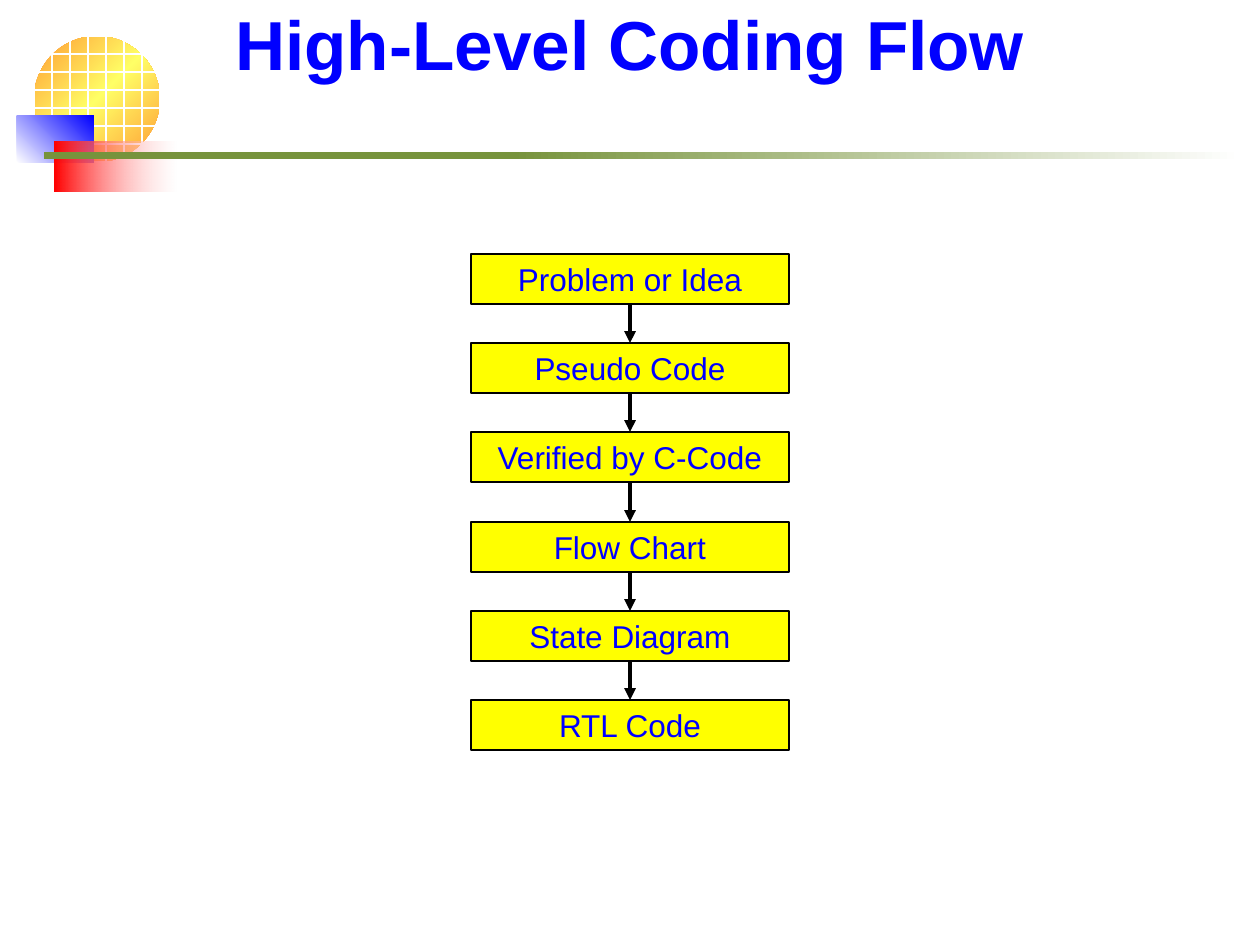
from dataclasses import dataclass
from itertools import product

from lxml.etree import SubElement
from pptx import Presentation
from pptx.dml.color import RGBColor
from pptx.enum.shapes import MSO_CONNECTOR, MSO_SHAPE
from pptx.enum.text import MSO_ANCHOR, PP_ALIGN
from pptx.oxml.ns import qn
from pptx.util import Emu, Pt

PX_PER_INCH = 126
FONT = "Arial"

BLUE = RGBColor(0x00, 0x00, 0xFF)
YELLOW = RGBColor(0xFF, 0xFF, 0x00)
BLACK = RGBColor(0x00, 0x00, 0x00)
WHITE = RGBColor(0xFF, 0xFF, 0xFF)
RED = RGBColor(0xFF, 0x00, 0x00)
ORANGE = RGBColor(0xFF, 0x99, 0x33)
PALE_YELLOW = RGBColor(0xFF, 0xFF, 0x66)
OLIVE = RGBColor(0x77, 0x93, 0x3C)


@dataclass
class Box:
    left: int
    top: int
    width: int
    height: int

    def emu(self) -> list[Emu]:
        return [px(v) for v in (self.left, self.top, self.width, self.height)]


@dataclass
class Stop:
    pos: int
    color: RGBColor
    opacity: int = 100


@dataclass
class Band:
    box: Box
    angle: int
    stops: list[Stop]


def px(n: int) -> Emu:
    return Emu(round(n * 914400 / PX_PER_INCH))


def add_preset(shapes, kind, box: Box):
    s = shapes.add_shape(kind, *box.emu())
    s.shadow.inherit = False
    s.fill.background()
    s.line.fill.background()
    return s


def outline(s, color: RGBColor, width: float) -> None:
    s.line.color.rgb = color
    s.line.width = Pt(width)


def fill_gradient(s, stops: list[Stop], angle: int) -> None:
    """Fill with any number of stops; the angle runs clockwise in degrees."""
    s.fill.gradient()
    grad = s.element.spPr.find(qn("a:gradFill"))
    for child in list(grad):
        grad.remove(child)
    gs_list = SubElement(grad, qn("a:gsLst"))
    for stop in stops:
        gs = SubElement(gs_list, qn("a:gs"), pos=str(stop.pos * 1000))
        clr = SubElement(gs, qn("a:srgbClr"), val=str(stop.color))
        if stop.opacity < 100:
            SubElement(clr, qn("a:alpha"), val=str(stop.opacity * 1000))
    SubElement(grad, qn("a:lin"), ang=str(angle * 60000), scaled="0")


def set_text(s, text: str, size: float, bold: bool = False, wrap: bool = True) -> None:
    tf = s.text_frame
    tf.word_wrap = wrap
    tf.vertical_anchor = MSO_ANCHOR.MIDDLE
    p = tf.paragraphs[0]
    p.text = text
    p.alignment = PP_ALIGN.CENTER
    p.font.name = FONT
    p.font.size = Pt(size)
    p.font.bold = bold
    p.font.color.rgb = BLUE


def add_arrow(shapes, x: int, top: int, bottom: int) -> None:
    c = shapes.add_connector(MSO_CONNECTOR.STRAIGHT, px(x), px(top), px(x), px(bottom))
    outline(c, BLACK, 2.25)
    SubElement(c.line._get_or_add_ln(), qn("a:tailEnd"), type="triangle")
    SubElement(c._element.spPr, qn("a:effectLst"))


def add_globe(shapes, box: Box, cells: int) -> None:
    globe = shapes.add_group_shape().shapes
    disc = add_preset(globe, MSO_SHAPE.OVAL, box)
    fill_gradient(disc, [Stop(0, ORANGE), Stop(50, PALE_YELLOW), Stop(100, ORANGE)], 45)
    size = box.width // cells
    for col, row in product(range(cells), repeat=2):
        cell = Box(box.left + col * size, box.top + row * size, size, size)
        outline(add_preset(globe, MSO_SHAPE.RECTANGLE, cell), WHITE, 0.75)


def add_flow(shapes, steps: list[str], first: Box, last_top: int) -> None:
    flow = shapes.add_group_shape().shapes
    pitch = (last_top - first.top) / (len(steps) - 1)
    tops = [round(first.top + i * pitch) for i in range(len(steps))]
    for step, top in zip(steps, tops):
        s = add_preset(flow, MSO_SHAPE.RECTANGLE, Box(first.left, top, first.width, first.height))
        s.fill.solid()
        s.fill.fore_color.rgb = YELLOW
        outline(s, BLACK, 0.75)
        set_text(s, step, 18, wrap=False)
    for top, next_top in zip(tops, tops[1:]):
        add_arrow(flow, first.left + first.width // 2, top + first.height, next_top)


BANDS = [
    Band(Box(17, 116, 77, 47), 315, [Stop(0, WHITE), Stop(100, BLUE)]),
    Band(Box(54, 142, 122, 50), 0, [Stop(0, RED), Stop(100, WHITE, 29)]),
    Band(Box(44, 152, 1198, 7), 0, [Stop(39, OLIVE), Stop(100, WHITE)]),
]
STEPS = [
    "Problem or Idea",
    "Pseudo Code",
    "Verified by C-Code",
    "Flow Chart",
    "State Diagram",
    "RTL Code",
]


def main() -> None:
    prs = Presentation()
    prs.slide_width, prs.slide_height = px(1260), px(945)
    shapes = prs.slides.add_slide(prs.slide_layouts[6]).shapes

    # Header decoration
    add_globe(shapes, Box(34, 36, 126, 126), 7)
    for band in BANDS:
        s = add_preset(shapes, MSO_SHAPE.RECTANGLE, band.box)
        fill_gradient(s, band.stops, band.angle)

    # Title
    title = shapes.add_textbox(*Box(0, 0, 1260, 86).emu())
    set_text(title, "High-Level Coding Flow", 39.6, bold=True)

    # Flow of steps
    add_flow(shapes, STEPS, Box(471, 254, 318, 50), 700)

    prs.save("out.pptx")


if __name__ == "__main__":
    main()
